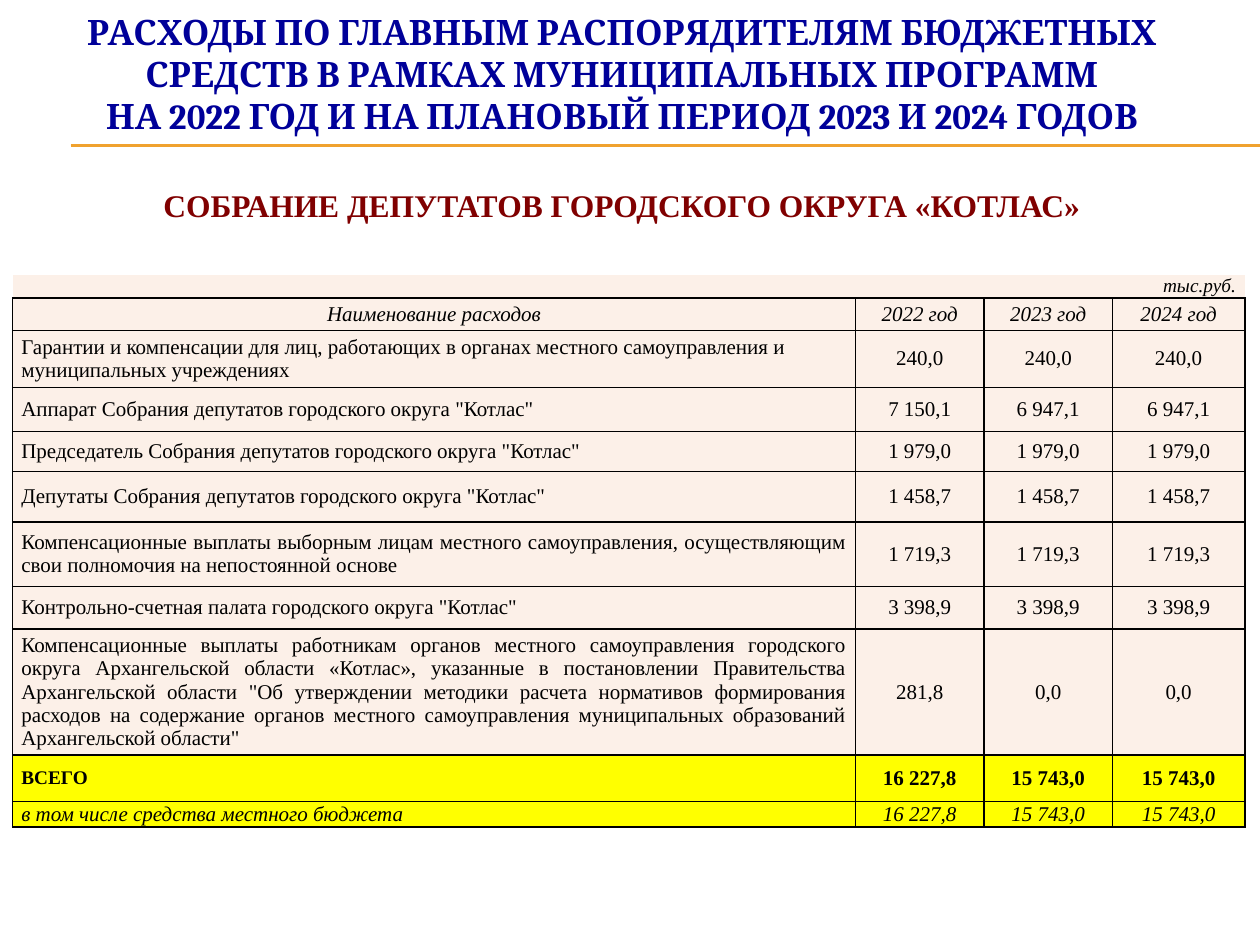
import pptx
import pptx.util
import pptx.dml.color
import pptx.enum.shapes
import pptx.enum.text
import pptx.oxml.ns
from lxml import etree

Inches = pptx.util.Inches
Pt = pptx.util.Pt
RGBColor = pptx.dml.color.RGBColor
Align = pptx.enum.text.PP_ALIGN
Anchor = pptx.enum.text.MSO_ANCHOR
qn = pptx.oxml.ns.qn

NAVY = RGBColor(0x00, 0x00, 0x99)
MAROON = RGBColor(0x80, 0x00, 0x00)
GOLD = RGBColor(0xF0, 0xA2, 0x2E)
BLACK = RGBColor(0x00, 0x00, 0x00)
CREAM = RGBColor(0xFC, 0xF0, 0xE8)
YELLOW = RGBColor(0xFF, 0xFF, 0x00)
BODY_FONT = "Times New Roman"

HEADING = [
    "РАСХОДЫ ПО ГЛАВНЫМ РАСПОРЯДИТЕЛЯМ БЮДЖЕТНЫХ СРЕДСТВ В РАМКАХ МУНИЦИПАЛЬНЫХ ПРОГРАММ",
    "НА 2022 ГОД И НА ПЛАНОВЫЙ ПЕРИОД 2023 И 2024 ГОДОВ",
]
SUBHEADING = ["СОБРАНИЕ ДЕПУТАТОВ ГОРОДСКОГО ОКРУГА «КОТЛАС»"]

COLUMN_WIDTHS = [6.69, 1.02, 1.02, 1.05]
# Row height, alignment of the first column, cell texts
ROWS = [
    (0.17, Align.LEFT, ["", "", "", "тыс.руб."]),
    (0.26, Align.CENTER, ["Наименование расходов", "2022 год", "2023 год", "2024 год"]),
    (0.45, Align.LEFT, [
        "Гарантии и компенсации для лиц, работающих в органах местного самоуправления "
        "и муниципальных учреждениях", "240,0", "240,0", "240,0"]),
    (0.35, Align.JUSTIFY, [
        'Аппарат Собрания депутатов городского округа "Котлас"',
        "7 150,1", "6 947,1", "6 947,1"]),
    (0.32, Align.JUSTIFY, [
        'Председатель Собрания депутатов городского округа "Котлас"',
        "1 979,0", "1 979,0", "1 979,0"]),
    (0.40, Align.JUSTIFY, [
        'Депутаты Собрания депутатов городского округа "Котлас"',
        "1 458,7", "1 458,7", "1 458,7"]),
    (0.51, Align.JUSTIFY, [
        "Компенсационные выплаты выборным лицам местного самоуправления, "
        "осуществляющим свои полномочия на непостоянной основе",
        "1 719,3", "1 719,3", "1 719,3"]),
    (0.34, Align.JUSTIFY, [
        'Контрольно-счетная палата городского округа "Котлас"',
        "3 398,9", "3 398,9", "3 398,9"]),
    (0.92, Align.JUSTIFY, [
        "Компенсационные выплаты работникам органов местного самоуправления городского "
        "округа Архангельской области «Котлас», указанные в постановлении Правительства "
        'Архангельской области "Об утверждении методики расчета нормативов формирования '
        "расходов на содержание органов местного самоуправления муниципальных образований "
        'Архангельской области"', "281,8", "0,0", "0,0"]),
    (0.37, Align.LEFT, ["ВСЕГО", "16 227,8", "15 743,0", "15 743,0"]),
    (0.19, Align.LEFT, [
        "в том числе средства местного бюджета", "16 227,8", "15 743,0", "15 743,0"]),
]
UNIT_ROW, HEADER_ROW = 0, 1
TOTAL_ROW, LOCAL_ROW = len(ROWS) - 2, len(ROWS) - 1


def add_run(paragraph, text, font_name, size, color, bold=False, italic=False):
    run = paragraph.add_run()
    run.text = text
    run.font.name = font_name
    run.font.size = Pt(size)
    run.font.color.rgb = color
    run.font.bold = bold
    run.font.italic = italic


def add_title(slide, top, height, lines, font_name, size, color):
    box = slide.shapes.add_textbox(Inches(0.04), Inches(top), Inches(9.79), Inches(height))
    frame = box.text_frame
    frame.word_wrap = True
    frame.vertical_anchor = Anchor.MIDDLE
    frame.margin_top = frame.margin_bottom = 0
    paragraph = frame.paragraphs[0]
    paragraph.alignment = Align.CENTER
    for index, line in enumerate(lines):
        if index:
            paragraph.add_line_break()
        add_run(paragraph, line, font_name, size, color, bold=True)


def add_rule(slide, y):
    rule = slide.shapes.add_connector(
        pptx.enum.shapes.MSO_CONNECTOR.STRAIGHT, Inches(0.56), Inches(y), Inches(10), Inches(y))
    rule.line.color.rgb = GOLD
    rule.line.width = Pt(0.75)
    etree.SubElement(rule._element.spPr, qn("a:effectLst"))


def set_borders(cell, visible_sides):
    """Draw the named sides (L, R, T, B) in black and hide the others."""
    properties = cell._tc.get_or_add_tcPr()
    for position, side in enumerate("LRTB"):
        border = etree.Element(qn(f"a:ln{side}"), w=str(Pt(1)))
        if side in visible_sides:
            fill = etree.SubElement(border, qn("a:solidFill"))
            etree.SubElement(fill, qn("a:srgbClr"), val=str(BLACK))
        else:
            etree.SubElement(border, qn("a:noFill"))
        properties.insert(position, border)


def fill_cell(cell, text, row, column, first_alignment):
    cell.margin_left = cell.margin_right = Inches(0.07)
    cell.margin_top = cell.margin_bottom = 0
    cell.vertical_anchor = Anchor.MIDDLE
    cell.fill.solid()
    cell.fill.fore_color.rgb = YELLOW if row >= TOTAL_ROW else CREAM
    set_borders(cell, "B" if row == UNIT_ROW else "LRTB")

    small = row == UNIT_ROW or (row >= TOTAL_ROW and column == 0)
    if row == LOCAL_ROW:
        small = False
    size = 11 if small else 12
    paragraph = cell.text_frame.paragraphs[0]
    if not text:
        paragraph._p.get_or_add_endParaRPr().set("sz", str(size * 100))
        return
    if row == UNIT_ROW:
        paragraph.alignment = Align.RIGHT
    else:
        paragraph.alignment = Align.CENTER if column else first_alignment
    add_run(paragraph, text, BODY_FONT, size, BLACK, bold=row == TOTAL_ROW,
            italic=row in (UNIT_ROW, HEADER_ROW, LOCAL_ROW))


def add_expense_table(slide):
    total_height = sum(height for height, _, _ in ROWS)
    table = slide.shapes.add_table(
        len(ROWS), len(COLUMN_WIDTHS), Inches(0.1), Inches(2.18),
        Inches(sum(COLUMN_WIDTHS)), Inches(total_height)).table
    table.first_row = False
    table.horz_banding = False
    for column, width in zip(table.columns, COLUMN_WIDTHS):
        column.width = Inches(width)
    for row, (height, first_alignment, texts) in enumerate(ROWS):
        table.rows[row].height = Inches(height)
        for column, text in enumerate(texts):
            fill_cell(table.cell(row, column), text, row, column, first_alignment)


def main():
    presentation = pptx.Presentation()
    presentation.slide_width = Inches(10)
    presentation.slide_height = Inches(7.5)
    slide = presentation.slides.add_slide(presentation.slide_layouts[6])
    for y in (1.15, 1.16):
        add_rule(slide, y)
    add_title(slide, 0.08, 1, HEADING, "Cambria", 20, NAVY)
    add_title(slide, 1.43, 0.4, SUBHEADING, BODY_FONT, 18, MAROON)
    add_expense_table(slide)
    presentation.save("out.pptx")


if __name__ == "__main__":
    main()
